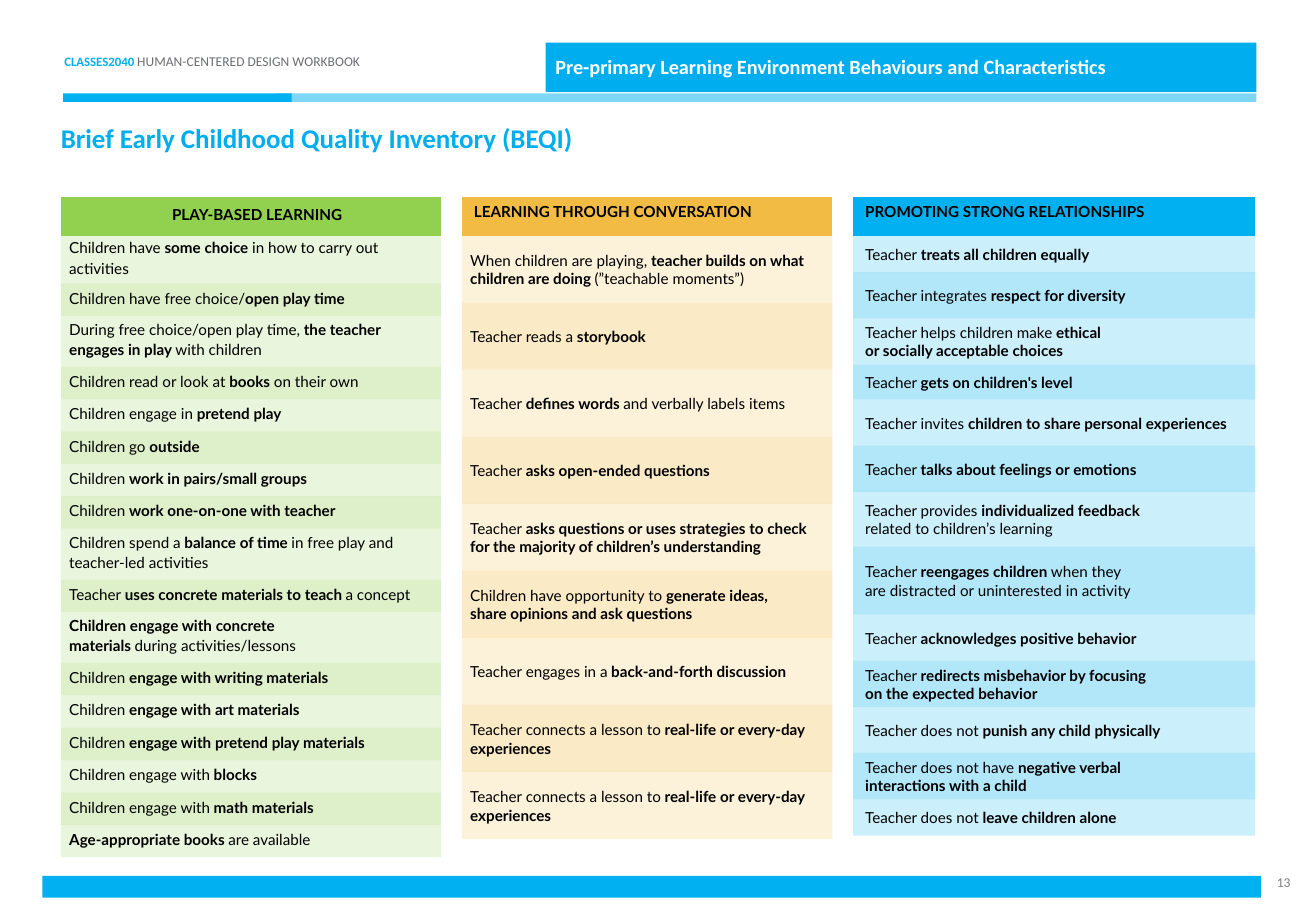
from copy import deepcopy

from lxml import etree
from pptx import Presentation
from pptx.dml.color import RGBColor
from pptx.enum.shapes import MSO_SHAPE
from pptx.enum.text import MSO_ANCHOR, PP_ALIGN
from pptx.oxml.ns import qn
from pptx.util import Inches, Pt

BLACK = RGBColor(0x00, 0x00, 0x00)
WHITE = RGBColor(0xFF, 0xFF, 0xFF)
GRAY = RGBColor(0x80, 0x80, 0x80)
DARK_GRAY = RGBColor(0x6D, 0x6E, 0x71)
TITLE_BLUE = RGBColor(0x00, 0xAE, 0xEF)
BLUE = RGBColor(0x00, 0xB0, 0xF0)
GREEN = RGBColor(0x92, 0xD0, 0x50)
AMBER = RGBColor(0xF2, 0xBB, 0x43)

PLAIN_TABLE_STYLE = "{2D5ABB26-0587-4C30-8999-92F81FD0307C}"
TABLE_TOP = 1.62
HEADER_MARGINS = (0.1, 0.05, 0.1, 0.05)

PLAY = [
    "Children have **some choice** in how to carry out activities",
    "Children have free choice/**open play time**",
    "During free choice/open play time, **the teacher engages in play **with children",
    "Children read or look at **books** on their own",
    "Children engage in **pretend play**",
    "Children go **outside**",
    "Children **work in pairs/small groups**",
    "Children **work one-on-one with teacher**",
    "Children spend a** balance of time **in free play and teacher-led activities",
    "Teacher **uses concrete materials to teach **a concept",
    "**Children engage with concrete\nmaterials **during activities/lessons",
    "Children **engage with writing materials**",
    "Children **engage with art materials**",
    "Children **engage with pretend play materials**",
    "Children engage with** blocks**",
    "Children engage with** math materials**",
    "**Age-appropriate books **are available",
]
CONVERSATION = [
    "When children are playing, **teacher builds on what children are doing **(”teachable moments”)",
    "Teacher reads a **storybook**",
    "Teacher **defines words **and verbally labels items",
    "Teacher **asks open-ended questions**",
    "Teacher **asks questions or uses strategies to check \nfor the majority of children’s understanding**",
    "Children have opportunity to **generate ideas, \nshare opinions and ask questions**",
    "Teacher engages in a** back-and-forth discussion**",
    "Teacher connects a lesson to **real-life or every-day experiences**",
    "Teacher connects a lesson to **real-life or every-day experiences**",
]
RELATIONSHIPS = [
    "Teacher** treats all children equally**",
    "Teacher integrates **respect for diversity**",
    "Teacher helps children make **ethical \nor socially acceptable choices**",
    "Teacher **gets on children's level**",
    "Teacher invites **children to share personal experiences**",
    "Teacher **talks about feelings or emotions**",
    "Teacher provides **individualized feedback \n**related to children’s learning",
    "Teacher **reengages children** when they \nare distracted or uninterested in activity",
    "Teacher **acknowledges positive behavior**",
    "Teacher **redirects misbehavior by focusing \non the expected behavior**",
    "Teacher does not **punish any child physically**",
    "Teacher does not have **negative verbal \ninteractions with a child**",
    "Teacher does not **leave children alone**",
]
PLAY_HEIGHTS = [0.42 if i in (2, 8, 10) else 0.8 / 3 for i in range(len(PLAY))]
CONVERSATION_HEIGHTS = [4.97 / 9] * len(CONVERSATION)
RELATIONSHIP_HEIGHTS = [0.3, 0.38, 0.38, 0.29, 0.38, 0.38, 0.45, 0.56,
                        0.38, 0.38, 0.38, 0.38, 0.3]


def write(tf, text, size=9, font="Lato", color=BLACK, bold_color=None,
          bold_size=None, align=PP_ALIGN.LEFT, line=None):
    """Fill the first paragraph; ** switches bold and a newline breaks the line."""
    p = tf.paragraphs[0]
    p.alignment = align
    if line:
        p.line_spacing = Pt(line)
    for i, part in enumerate(text.split("**")):
        bold = i % 2 == 1
        for j, piece in enumerate(part.split("\n")):
            if j:
                p.add_line_break()
                p._p.findall(qn("a:br"))[-1].append(deepcopy(r._r.rPr))
            if piece:
                r = p.add_run()
                r.text = piece
                r.font.name = font
                r.font.bold = bold
                r.font.size = Pt(bold_size if bold and bold_size else size)
                r.font.color.rgb = bold_color if bold and bold_color else color


def set_margins(box, margins):
    box.margin_left, box.margin_top, box.margin_right, box.margin_bottom = map(Inches, margins)


def set_fill(fill, color, opacity=100):
    fill.solid()
    fill.fore_color.rgb = color
    if opacity < 100:
        clr = fill._xPr.find(qn("a:solidFill"))[0]
        etree.SubElement(clr, qn("a:alpha"), val=str(opacity * 1000))


class SlideBuilder:
    def __init__(self, s, font="Calibri"):
        self.s = s
        self.font = font

    def bar(self, x, y, w, h, color, opacity=100):
        sp = self.s.shapes.add_shape(MSO_SHAPE.RECTANGLE, *map(Inches, (x, y, w, h)))
        sp.shadow.inherit = False
        sp.line.fill.background()
        set_fill(sp.fill, color, opacity)
        return sp

    def label(self, sp, text, margins, anchor=MSO_ANCHOR.TOP, **style):
        tf = sp.text_frame
        tf.word_wrap = True
        tf.vertical_anchor = anchor
        set_margins(tf, margins)
        write(tf, text, font=self.font, **style)

    def text(self, x, y, w, h, text, margins=(0, 0, 0, 0), **style):
        sp = self.s.shapes.add_textbox(*map(Inches, (x, y, w, h)))
        self.label(sp, text, margins, **style)

    def inventory(self, x, w, header, items, heights, color, margins, line=None,
                  header_margins=HEADER_MARGINS, header_anchor=MSO_ANCHOR.TOP,
                  header_line=None, header_align=PP_ALIGN.LEFT, header_height=0.32):
        """One-column table: a solid header above rows in two alternating tints."""
        heights = [header_height, *heights]
        table = self.s.shapes.add_table(len(heights), 1, Inches(x), Inches(TABLE_TOP),
                                        Inches(w), Inches(sum(heights))).table
        table.first_row = table.horz_banding = False
        table._tbl.tblPr.find(qn("a:tableStyleId")).text = PLAIN_TABLE_STYLE
        for row, height in zip(table.rows, heights):
            row.height = Inches(height)
        head, *cells = [row.cells[0] for row in table.rows]
        set_fill(head.fill, color)
        set_margins(head, header_margins)
        head.vertical_anchor = header_anchor
        write(head.text_frame, f"**{header}**", align=header_align, line=header_line)
        for i, (cell, item) in enumerate(zip(cells, items)):
            set_fill(cell.fill, color, 30 if i % 2 else 20)
            set_margins(cell, margins)
            cell.vertical_anchor = MSO_ANCHOR.MIDDLE
            write(cell.text_frame, item, line=line)


def main():
    prs = Presentation()
    prs.slide_width, prs.slide_height = Inches(10.83), Inches(7.5)
    b = SlideBuilder(prs.slides.add_slide(prs.slide_layouts[6]))

    b.text(10.31, 7.14, 0.41, 0.25, "13", margins=HEADER_MARGINS, size=8, color=GRAY,
           align=PP_ALIGN.RIGHT, anchor=MSO_ANCHOR.MIDDLE)
    b.text(0.51, 0.42, 3.03, 0.15, "**CLASSES2040 **HUMAN-CENTERED DESIGN WORKBOOK",
           margins=(0.02, 0.02, 0, 0), size=8, color=DARK_GRAY, bold_color=BLUE, bold_size=7.6)
    b.bar(0.52, 0.77, 1.88, 0.07, BLUE)
    b.bar(2.27, 0.77, 8.07, 0.07, BLUE, opacity=50)
    banner = b.bar(4.49, 0.35, 5.85, 0.41, TITLE_BLUE)
    b.label(banner, "**Pre-primary Learning Environment Behaviours and Characteristics**",
            margins=(0.08, 0.1, 0, 0), size=12, color=WHITE)
    b.text(0.5, 1, 9.29, 0.27, "**Brief Early Childhood Quality Inventory (BEQI)**",
           size=16, color=TITLE_BLUE)

    b.inventory(0.5, 3.13, "PLAY-BASED LEARNING", PLAY, PLAY_HEIGHTS, GREEN,
                margins=(0.07, 0.01, 0.07, 0.05), line=12, header_margins=(0.1, 0, 0, 0.05),
                header_anchor=MSO_ANCHOR.MIDDLE, header_line=12.8, header_align=PP_ALIGN.CENTER)
    b.inventory(3.8, 3.05, "LEARNING THROUGH CONVERSATION", CONVERSATION,
                CONVERSATION_HEIGHTS, AMBER, margins=(0.07, 0.01, 0.07, 0))
    b.inventory(7.02, 3.31, "PROMOTING STRONG RELATIONSHIPS", RELATIONSHIPS,
                RELATIONSHIP_HEIGHTS, BLUE, margins=(0.1, 0.01, 0.01, 0))
    b.bar(0.35, 7.21, 10.03, 0.18, BLUE)

    prs.save("out.pptx")


if __name__ == "__main__":
    main()
